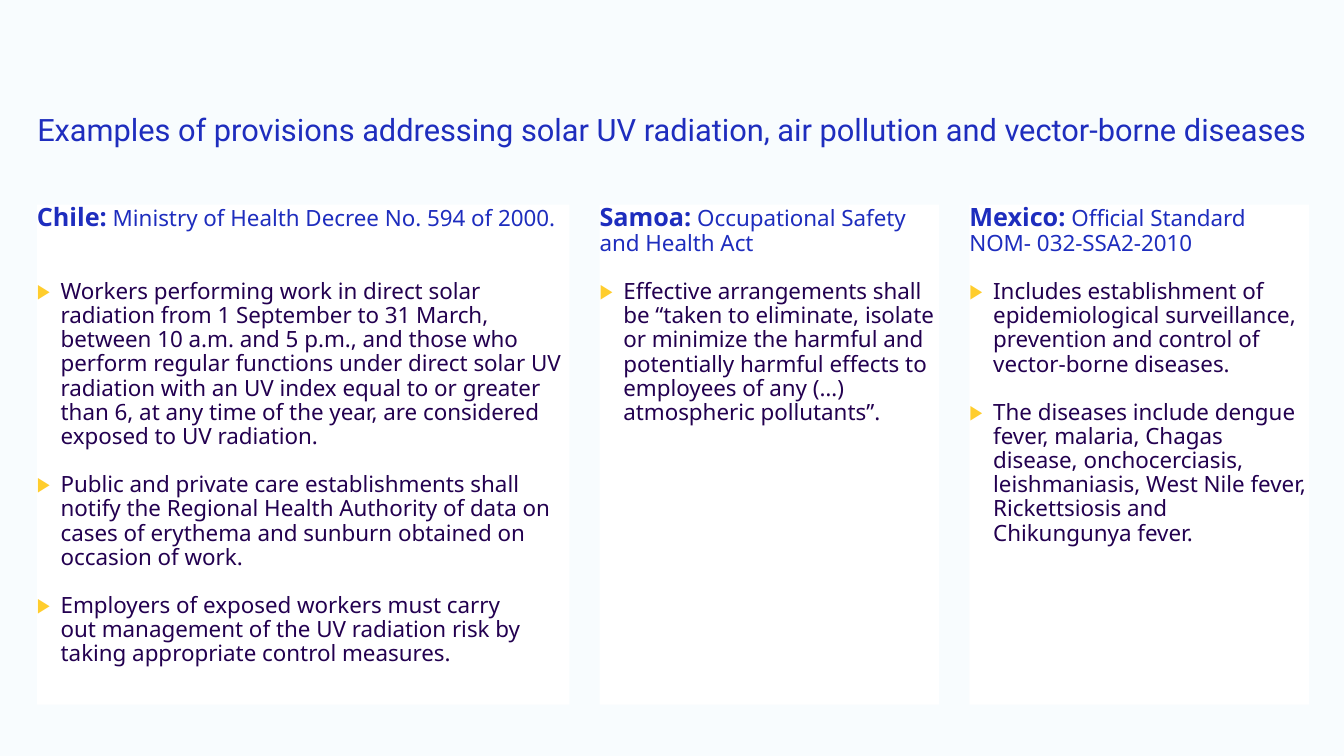
from lxml import etree
from pptx import Presentation
from pptx.dml.color import RGBColor
from pptx.enum.shapes import MSO_SHAPE
from pptx.enum.text import MSO_ANCHOR, PP_ALIGN
from pptx.oxml.ns import qn
from pptx.util import Cm, Pt

RECT = MSO_SHAPE.RECTANGLE
TOP = MSO_ANCHOR.TOP
LEFT = PP_ALIGN.LEFT

PALE = RGBColor(0xF8, 0xFC, 0xFE)
WHITE = RGBColor(0xFF, 0xFF, 0xFF)
BLUE = RGBColor(0x1E, 0x2D, 0xBE)
PLUM = RGBColor(0x23, 0x00, 0x50)
GOLD = "FFCD2D"

SANS = "Noto Sans"
HARD = chr(160)  # space that does not break
EDGE = 0.93
GAP = 0.76
INDENT = 0.6
BODY = 16
HEAD = 18
LINE = 17.2  # height of one body line in points


def set_frame(frame, wrap):
    frame.margin_left = frame.margin_right = 0
    frame.margin_top = frame.margin_bottom = 0
    frame.vertical_anchor = TOP
    frame.word_wrap = wrap


def add_run(para, text, font, size, color, bold=False):
    run = para.add_run()
    run.text = text
    run.font.name = font
    run.font.size = Pt(size)
    run.font.bold = bold
    run.font.color.rgb = color


# Country, law, lines left free below the heading, width, provisions
panels = [
    ("Chile:", " Ministry of Health Decree No. 594 of 2000.", 2, 13.42, [
        "Workers performing work in direct solar radiation from 1 September to 31 March, "
        "between 10 a.m. and 5 p.m., and those who perform regular functions under direct "
        "solar UV radiation with an UV index equal to or greater than 6, at any time of "
        "the year, are considered exposed to UV radiation.",
        "Public and private care establishments shall notify the Regional Health Authority "
        "of data on cases of erythema and sunburn obtained on occasion of work.",
        f"Employers of exposed workers must carry out{HARD}management of the UV radiation "
        f"risk by taking{HARD}appropriate control measures.",
    ]),
    ("Samoa:", " Occupational Safety and Health Act", 1, 8.56, [
        "Effective arrangements shall be “taken to eliminate, isolate or minimize the "
        "harmful and potentially harmful effects to employees of any (…) atmospheric "
        "pollutants”.",
    ]),
    ("Mexico:", " Official Standard NOM- 032-SSA2-2010", 1, 8.56, [
        "Includes establishment of epidemiological surveillance, prevention and control "
        "of vector-borne diseases.",
        "The diseases include dengue fever, malaria, Chagas disease, onchocerciasis, "
        "leishmaniasis, West Nile fever, Rickettsiosis and Chikungunya fever.",
    ]),
]

# Slide
deck = Presentation()
deck.slide_width = Cm(33.87)
deck.slide_height = Cm(19.05)
slide = deck.slides.add_slide(deck.slide_layouts[6])
slide.background.fill.solid()
slide.background.fill.fore_color.rgb = PALE

# Title
title = slide.shapes.add_textbox(Cm(0.94), Cm(2.9), Cm(32.03), Cm(1.3))
set_frame(title.text_frame, False)
para = title.text_frame.paragraphs[0]
para.line_spacing = 0.9
add_run(para, "Examples of provisions addressing solar UV radiation, air pollution "
        "and vector-borne diseases", "Roboto", 22, BLUE)

# Country panels
left = EDGE
for country, law, free, width, items in panels:
    panel = slide.shapes.add_shape(RECT, Cm(left), Cm(5.16), Cm(width), Cm(12.6))
    panel.shadow.inherit = False
    panel.fill.solid()
    panel.fill.fore_color.rgb = WHITE
    panel.line.fill.background()
    frame = panel.text_frame
    set_frame(frame, True)

    # Heading
    para = frame.paragraphs[0]
    para.alignment = LEFT
    para.line_spacing = 0.9
    add_run(para, country, SANS, HEAD, BLUE, True)
    add_run(para, law, SANS, BODY, BLUE)

    # Provisions with gold markers
    for num, item in enumerate(items):
        para = frame.add_paragraph()
        para.alignment = LEFT
        para.line_spacing = 0.9
        para.space_before = Pt(LINE * (free if num == 0 else 1))
        props = para._p.get_or_add_pPr()
        props.set("marL", str(Cm(INDENT)))
        props.set("indent", str(-Cm(INDENT)))
        tint = etree.SubElement(props, qn("a:buClr"))
        etree.SubElement(tint, qn("a:srgbClr"), val=GOLD)
        etree.SubElement(props, qn("a:buSzPct"), val="90000")
        etree.SubElement(props, qn("a:buFont"), typeface=SANS)
        etree.SubElement(props, qn("a:buChar"), char="▶")
        para.font.name = SANS
        para.font.size = Pt(BODY)
        add_run(para, item, SANS, BODY, PLUM)
    left += width + GAP

deck.save("out.pptx")
